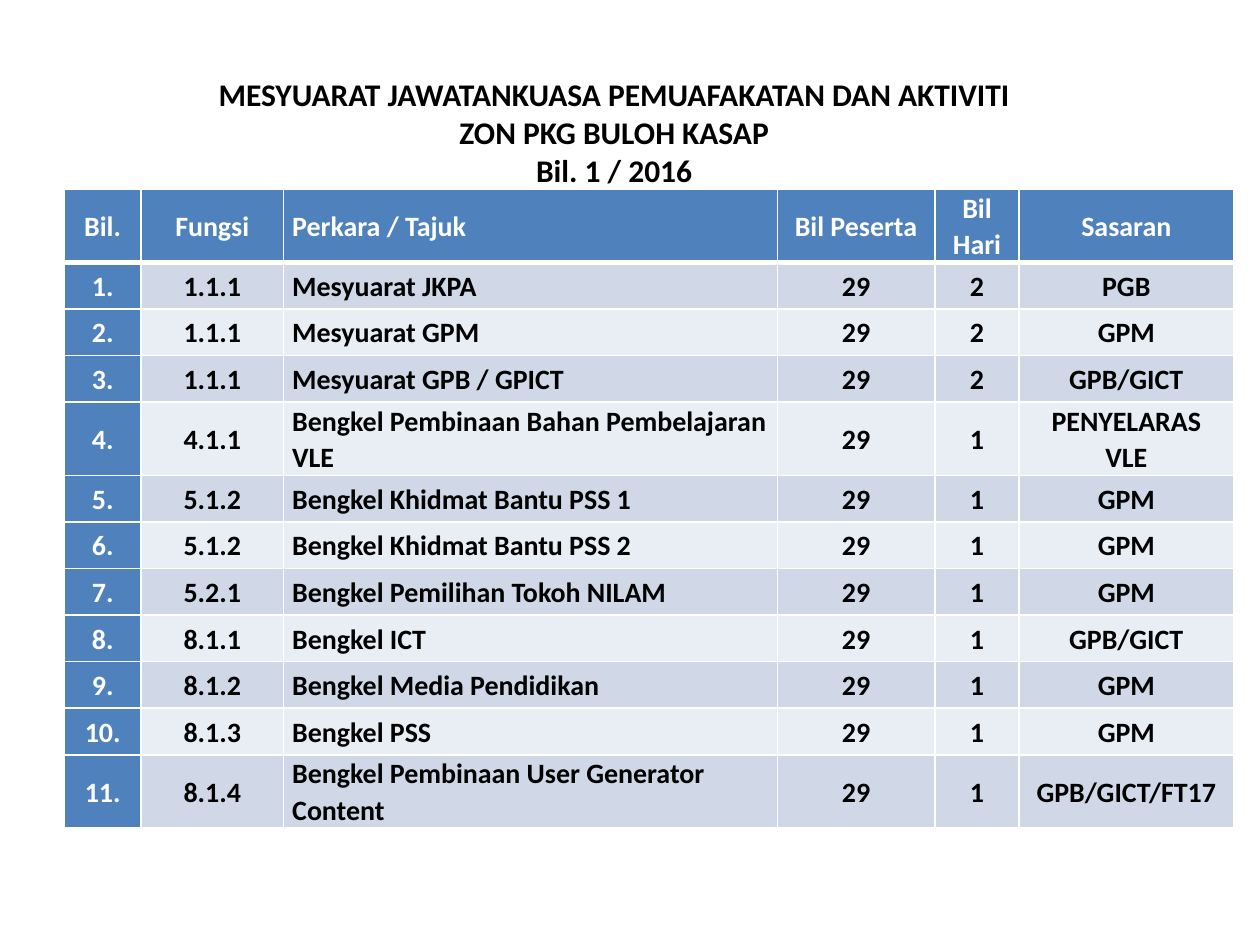
from dataclasses import astuple, dataclass

from lxml.etree import SubElement as Sub
from pptx import Presentation
from pptx.dml.color import RGBColor as Rgb
from pptx.enum.text import MSO_ANCHOR as Anchor, MSO_AUTO_SIZE as Auto, PP_ALIGN as Align
from pptx.oxml.ns import qn
from pptx.util import Inches, Pt

WIDE, HIGH = Inches(10), Inches(7.5)
FONT = "Calibri"
WHITE = Rgb(0xFF, 0xFF, 0xFF)
BLACK = Rgb(0, 0, 0)
BLUE = Rgb(0x4F, 0x81, 0xBD)
BANDS = (Rgb(0xD0, 0xD8, 0xE8), Rgb(0xE9, 0xED, 0xF4))
THIN, THICK = 1, 3
HEAD_ROW, BODY_ROW = Inches(0.48), Inches(0.37)


@dataclass(frozen=True)
class Column:
    name: str
    width: float
    align: Align = Align.CENTER


@dataclass(frozen=True)
class Event:
    code: str
    topic: str
    days: int
    target: str
    guests: int = 29

    def texts(self, number: int) -> list[str]:
        return [f"{number}.", self.code, self.topic,
                str(self.guests), str(self.days), self.target]


COLUMNS = [
    Column("Bil.", 0.61),
    Column("Fungsi", 1.13),
    Column("Perkara / Tajuk", 3.92, Align.LEFT),
    Column("Bil Peserta", 1.25),
    Column("Bil Hari", 0.67),
    Column("Sasaran", 1.7),
]
EVENTS = [
    Event("1.1.1", "Mesyuarat JKPA", 2, "PGB"),
    Event("1.1.1", "Mesyuarat GPM", 2, "GPM"),
    Event("1.1.1", "Mesyuarat GPB / GPICT", 2, "GPB/GICT"),
    Event("4.1.1", "Bengkel Pembinaan Bahan Pembelajaran VLE", 1, "PENYELARAS VLE"),
    Event("5.1.2", "Bengkel Khidmat Bantu PSS 1", 1, "GPM"),
    Event("5.1.2", "Bengkel Khidmat Bantu PSS 2", 1, "GPM"),
    Event("5.2.1", "Bengkel Pemilihan Tokoh NILAM", 1, "GPM"),
    Event("8.1.1", "Bengkel ICT", 1, "GPB/GICT"),
    Event("8.1.2", "Bengkel Media Pendidikan", 1, "GPM"),
    Event("8.1.3", "Bengkel PSS", 1, "GPM"),
    Event("8.1.4", "Bengkel Pembinaan User Generator Content", 1, "GPB/GICT/FT17"),
]
TITLE = ("MESYUARAT JAWATANKUASA PEMUAFAKATAN DAN AKTIVITI",
         "ZON PKG BULOH KASAP",
         "Bil. 1 / 2016")


def style(para, size: float, color: Rgb, align: Align) -> None:
    para.alignment = align
    for run in para.runs:
        font = run.font
        font.name, font.size, font.bold = FONT, Pt(size), True
        font.color.rgb = color


def border(cell, top: float, bottom: float) -> None:
    props = cell._tc.get_or_add_tcPr()
    for side, width in zip("LRTB", (THIN, THIN, top, bottom)):
        line = Sub(props, qn(f"a:ln{side}"), w=str(Pt(width)))
        Sub(Sub(line, qn("a:solidFill")), qn("a:srgbClr"), val=str(WHITE))


def fill_cell(cell, text: str, column: Column, row: int, first: bool) -> None:
    marked = row == 0 or first
    border(cell, THICK if row == 1 else THIN, THICK if row == 0 else THIN)
    cell.fill.solid()
    cell.fill.fore_color.rgb = BLUE if marked else BANDS[(row - 1) % 2]
    cell.vertical_anchor = Anchor.MIDDLE
    cell.margin_left = cell.margin_right = Inches(0.07)
    cell.margin_top = cell.margin_bottom = 0
    cell.text_frame.text = text
    para = cell.text_frame.paragraphs[0]
    para.line_spacing = 1.07
    style(para, 16, WHITE if marked else BLACK, column.align)


def add_title(slide) -> None:
    title = slide.shapes.title
    title.left, title.top = 0, int(HIGH * 0.056)
    title.width, title.height = int(WIDE * 0.975), int(HIGH / 6)
    frame = title.text_frame
    frame.text = "\v".join(TITLE)
    frame.auto_size = Auto.NONE
    frame.vertical_anchor = Anchor.MIDDLE
    style(frame.paragraphs[0], 18, BLACK, Align.CENTER)


def add_plan(slide) -> None:
    rows = [[column.name for column in COLUMNS]]
    rows += [event.texts(number) for number, event in enumerate(EVENTS, 1)]
    table = slide.shapes.add_table(
        len(rows), len(COLUMNS), Inches(0.51), int(HIGH * 0.2),
        Inches(sum(column.width for column in COLUMNS)),
        HEAD_ROW + BODY_ROW * len(EVENTS)).table
    table.first_col = True
    for place, column in zip(table.columns, COLUMNS):
        place.width = Inches(column.width)
    for r, texts in enumerate(rows):
        table.rows[r].height = BODY_ROW if r else HEAD_ROW
        for c, (text, column) in enumerate(zip(texts, COLUMNS)):
            fill_cell(table.cell(r, c), text, column, r, c == 0)


def main() -> None:
    deck = Presentation()
    deck.slide_width, deck.slide_height = WIDE, HIGH
    slide = deck.slides.add_slide(deck.slide_layouts.get_by_name("Title Only"))
    add_title(slide)
    add_plan(slide)
    deck.save("out.pptx")


if __name__ == "__main__":
    main()
